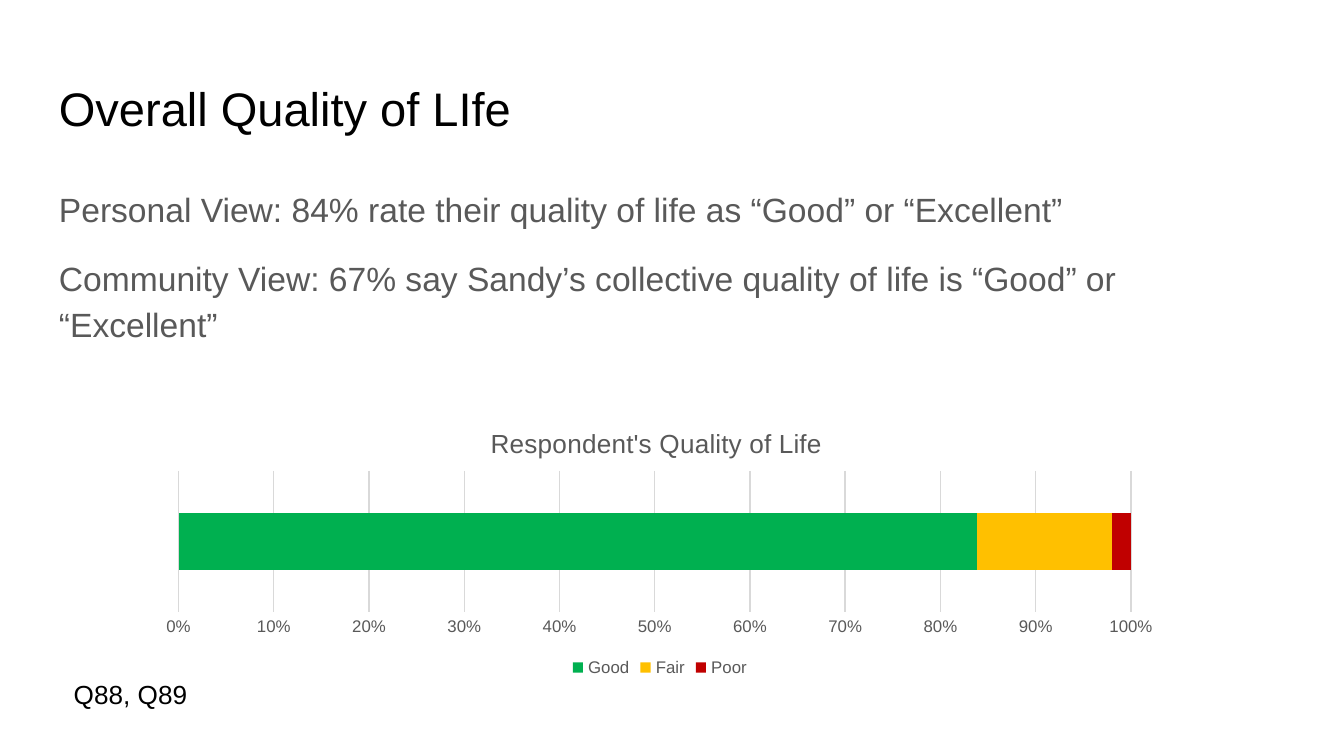
from dataclasses import dataclass

from lxml import etree
from pptx import Presentation
from pptx.chart.data import CategoryChartData
from pptx.dml.color import RGBColor
from pptx.enum.chart import XL_CHART_TYPE, XL_LEGEND_POSITION, XL_TICK_LABEL_POSITION, XL_TICK_MARK
from pptx.oxml.ns import qn
from pptx.util import Inches, Pt

STACKED_BAR = XL_CHART_TYPE.BAR_STACKED_100
LEGEND_BOTTOM = XL_LEGEND_POSITION.BOTTOM
LABELS_BY_AXIS = XL_TICK_LABEL_POSITION.NEXT_TO_AXIS
NO_TICKS = XL_TICK_MARK.NONE


@dataclass(frozen=True)
class Theme:
    font: str = "Arial"
    ink: str = "000000"
    muted: str = "595959"
    grid: str = "D9D9D9"
    title_size: float = 25.2
    body_size: float = 18
    note_size: float = 14
    label_size: float = 9


class SlideBuilder:
    def __init__(self, slide, theme):
        self.slide = slide
        self.theme = theme

    def style(self, font, size, color):
        font.name = self.theme.font
        font.size = Pt(size)
        font.bold = False
        font.color.rgb = RGBColor.from_string(color)

    def text(self, box, lines, size, color, inset=0.1, line_spacing=None, gap=0):
        area = self.slide.shapes.add_textbox(*map(Inches, box))
        frame = area.text_frame
        frame.word_wrap = True
        frame.margin_top = frame.margin_bottom = Inches(inset)
        frame.text = "\n".join(lines)
        for index, paragraph in enumerate(frame.paragraphs):
            if line_spacing:
                paragraph.line_spacing = line_spacing
            if index:
                paragraph.space_before = paragraph.space_after = Pt(gap)
            for run in paragraph.runs:
                self.style(run.font, size, color)

    def place(self, owner, position, **fractions):
        """Give a chart part a manual layout, in fractions of the chart area."""
        layout = owner.find(qn("c:layout"))
        if layout is not None:
            owner.remove(layout)
        layout = etree.Element(qn("c:layout"))
        manual = etree.SubElement(layout, qn("c:manualLayout"))
        if "w" in fractions:
            etree.SubElement(manual, qn("c:layoutTarget")).set("val", "inner")
        for axis in ("x", "y"):
            etree.SubElement(manual, qn(f"c:{axis}Mode")).set("val", "edge")
        for name, value in fractions.items():
            etree.SubElement(manual, qn(f"c:{name}")).set("val", str(value))
        owner.insert(position, layout)

    def rating_chart(self, box, title, category, ratings):
        theme = self.theme
        data = CategoryChartData()
        data.categories = [category]
        for name, share, _ in ratings:
            data.add_series(name, [share])
        chart = self.slide.shapes.add_chart(STACKED_BAR, *map(Inches, box), data).chart
        self.style(chart.font, theme.label_size, theme.muted)

        chart.has_title = True
        heading = chart.chart_title
        heading.include_in_layout = False
        heading.text_frame.text = title
        self.style(heading.text_frame.paragraphs[0].runs[0].font, theme.note_size, theme.muted)
        self.place(heading._element, 1, x=0.33, y=0.04)

        chart.has_legend = True
        chart.legend.position = LEGEND_BOTTOM
        chart.legend.include_in_layout = False
        self.style(chart.legend.font, theme.label_size, theme.muted)

        plot = chart.plots[0]
        plot.vary_by_categories = False
        plot.gap_width = 150
        plot.overlap = 100
        for series, (_, _, color) in zip(plot.series, ratings):
            series.format.fill.solid()
            series.format.fill.fore_color.rgb = RGBColor.from_string(color)
        plot_area = chart._chartSpace.find(".//" + qn("c:plotArea"))
        self.place(plot_area, 0, x=0.03, y=0.22, w=0.93, h=0.52)

        chart.category_axis.visible = False
        axis = chart.value_axis
        axis.minimum_scale = 0
        axis.major_tick_mark = axis.minor_tick_mark = NO_TICKS
        axis.tick_label_position = LABELS_BY_AXIS
        axis.tick_labels.number_format = "0%"
        axis.tick_labels.number_format_is_linked = False
        self.style(axis.tick_labels.font, theme.label_size, theme.muted)
        axis.format.line.fill.background()
        axis.has_major_gridlines = True
        gridline = axis.major_gridlines.format.line
        gridline.width = Pt(0.75)
        gridline.color.rgb = RGBColor.from_string(theme.grid)


def main():
    deck = Presentation()
    deck.slide_width = Inches(10)
    deck.slide_height = deck.slide_width * 9 // 16
    theme = Theme()
    builder = SlideBuilder(deck.slides.add_slide(deck.slide_layouts[6]), theme)

    builder.text((0.34, 0.49, 9.32, 0.63), ["Overall Quality of LIfe"],
                 theme.title_size, theme.ink)
    views = [
        "Personal View: 84% rate their quality of life as “Good” or “Excellent”",
        "Community View: 67% say Sandy’s collective quality of life is “Good” or “Excellent”",
    ]
    builder.text((0.34, 1.26, 9.28, 3.74), views, theme.body_size, theme.muted,
                 line_spacing=1.15, gap=12)
    ratings = [("Good", 83, "00B050"), ("Fair", 14, "FFC000"), ("Poor", 2, "C00000")]
    builder.rating_chart((1.1, 3.06, 7.62, 2.02), "Respondent's Quality of Life", "1", ratings)
    builder.text((0.45, 5, 1.98, 0.34), ["Q88, Q89"], theme.note_size, theme.ink, inset=0.05)

    deck.save("out.pptx")


if __name__ == "__main__":
    main()
